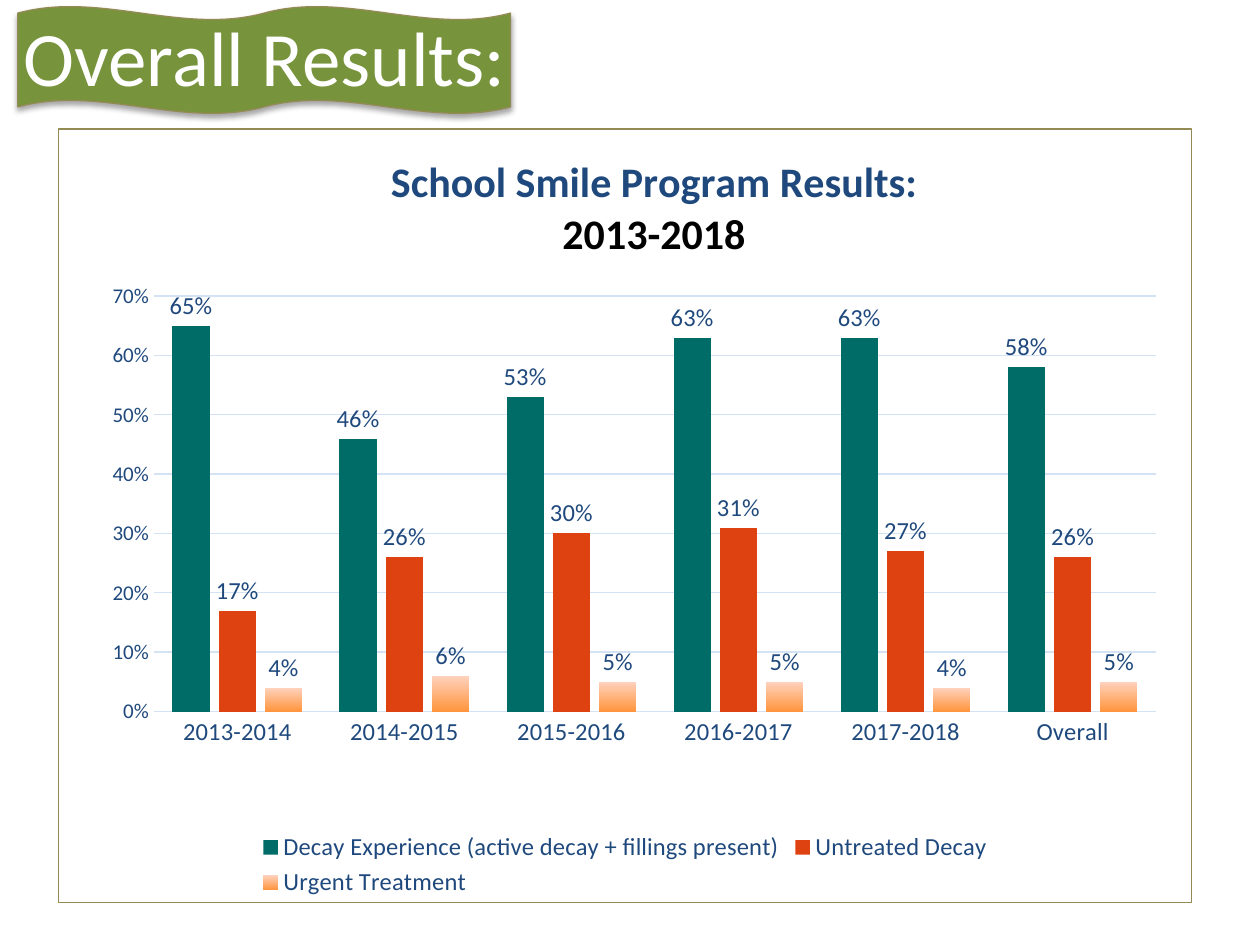
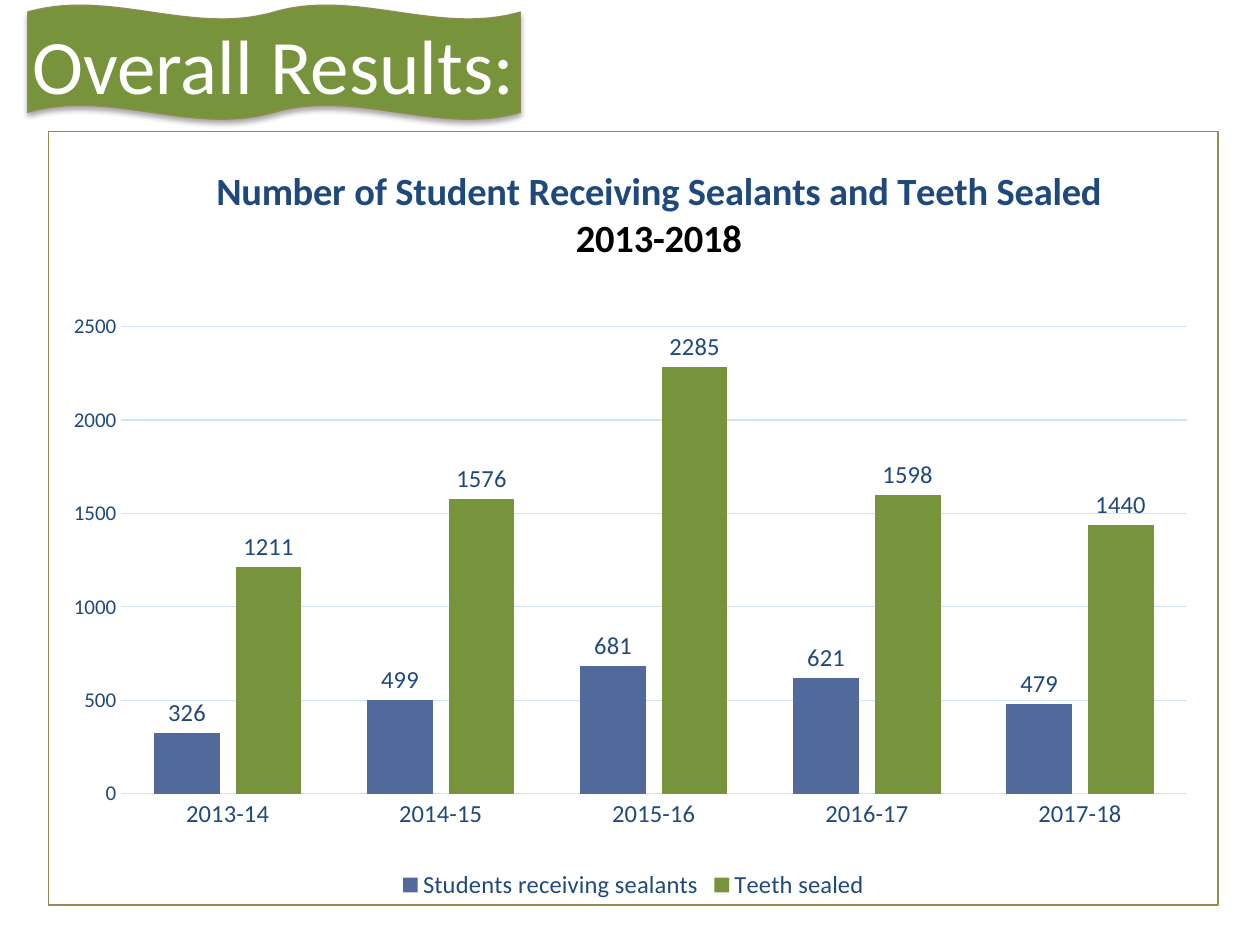
from pptx import Presentation
from pptx.chart.data import CategoryChartData
from pptx.dml.color import RGBColor
from pptx.enum.chart import XL_CHART_TYPE as ChartType, XL_LABEL_POSITION as LabelPosition
from pptx.enum.chart import XL_LEGEND_POSITION as LegendPosition, XL_TICK_MARK as TickMark
from pptx.enum.shapes import MSO_SHAPE as Shape
from pptx.enum.text import MSO_ANCHOR as Anchor, PP_ALIGN as Align
from pptx.oxml import parse_xml
from pptx.oxml.ns import nsdecls, qn
from pptx.util import Cm, Pt

FONT = "Calibri"
GREEN = RGBColor(0x77, 0x93, 0x3C)
TAN = RGBColor(0x94, 0x8A, 0x54)
NAVY = RGBColor(0x1F, 0x49, 0x7D)
BLACK = RGBColor(0x00, 0x00, 0x00)
WHITE = RGBColor(0xFF, 0xFF, 0xFF)
PALE_BLUE = RGBColor(0xD4, 0xE3, 0xF4)
TEAL = RGBColor(0x00, 0x6C, 0x67)
RED = RGBColor(0xDF, 0x42, 0x11)
ORANGE = RGBColor(0xFF, 0x95, 0x3E)
PEACH = RGBColor(0xFF, 0xD2, 0xBD)
SLATE = RGBColor(0x52, 0x69, 0x9C)

HEADING = "Overall Results:"
YEARS = "2013-2018"
PAGES = [
    {
        "wave": (0.36, 0.13, 9.93, 2.16),
        "title": (0, 0, 10.67, 3.18),
        "frame": (1.17, 2.59, 22.86, 15.62),
        "plot": (0.084, 0.216, 0.885, 0.537),
        "caption": "School Smile Program Results:",
        "caption_size": 24,
        "caption_corner": (0.29, 0.03),
        "format": "0%",
        "top": 0.7,
        "step": 0.1,
        "categories": ["2013-2014", "2014-2015", "2015-2016", "2016-2017", "2017-2018", "Overall"],
        "series": [
            ("Decay Experience (active decay + fillings present)", [TEAL],
             [0.65, 0.46, 0.53, 0.63, 0.63, 0.58]),
            ("Untreated Decay", [RED], [0.17, 0.26, 0.30, 0.31, 0.27, 0.26]),
            ("Urgent Treatment", [ORANGE, PEACH], [0.04, 0.06, 0.05, 0.05, 0.04, 0.05]),
        ],
    },
    {
        "wave": (0.56, 0.1, 9.93, 2.31),
        "title": (0, 0.15, 11.02, 3.18),
        "frame": (0.97, 2.64, 23.6, 15.62),
        "plot": (0.062, 0.252, 0.911, 0.604),
        "caption": "Number of Student Receiving Sealants and Teeth Sealed",
        "caption_size": 22,
        "caption_corner": (0.14, 0.04),
        "format": "General",
        "top": 2500,
        "step": 500,
        "categories": ["2013-14", "2014-15", "2015-16", "2016-17", "2017-18"],
        "series": [
            ("Students receiving sealants", [SLATE], [326, 499, 681, 621, 479]),
            ("Teeth sealed", [GREEN], [1211, 1576, 2285, 1598, 1440]),
        ],
    },
]


def set_font(font, size, color, bold=False):
    font.name, font.size, font.bold = FONT, Pt(size), bold
    font.color.rgb = color


def set_line(line, color):
    line.color.rgb = color
    line.width = Pt(0.75)


def set_layout(element, index, fractions, inner=False):
    for old in element.findall(qn("c:layout")):
        element.remove(old)
    target = '<c:layoutTarget val="inner"/>' if inner else ""
    modes = "".join(f'<c:{axis}Mode val="edge"/>' for axis in "xy")
    sizes = "".join(f'<c:{key} val="{value}"/>' for key, value in zip("xywh", fractions))
    element.insert(index, parse_xml(
        f'<c:layout {nsdecls("c")}><c:manualLayout>{target}{modes}{sizes}'
        "</c:manualLayout></c:layout>"))


def add_heading(page, wave_box, title_box):
    wave = page.shapes.add_shape(Shape.DOUBLE_WAVE, *map(Cm, wave_box))
    wave.fill.solid()
    wave.fill.fore_color.rgb = GREEN
    set_line(wave.line, TAN)
    wave._element.spPr.append(parse_xml(
        f'<a:effectLst {nsdecls("a")}><a:outerShdw blurRad="40000" dist="23000" dir="5400000" '
        'rotWithShape="0"><a:srgbClr val="000000"><a:alpha val="35000"/></a:srgbClr>'
        "</a:outerShdw></a:effectLst>"))
    page.shapes._spTree.insert(2, wave._element)

    title = page.shapes.title
    title.left, title.top, title.width, title.height = map(Cm, title_box)
    frame = title.text_frame
    frame.text = HEADING
    frame.vertical_anchor = Anchor.TOP
    frame.margin_top = Cm(0.2)
    para = frame.paragraphs[0]
    para.alignment = Align.CENTER
    set_font(para.font, 44, WHITE)


def add_caption(chart, content):
    frame = chart.chart_title.text_frame
    frame.text = f"{content['caption']}\n{YEARS}"
    for para, color in zip(frame.paragraphs, (NAVY, BLACK)):
        set_font(para.font, content["caption_size"], color, bold=True)
    set_layout(chart.chart_title._element, 1, content["caption_corner"])


def style_axes(chart, content):
    for axis, size in ((chart.category_axis, 14), (chart.value_axis, 12)):
        axis.major_tick_mark = axis.minor_tick_mark = TickMark.NONE
        set_font(axis.tick_labels.font, size, NAVY)
    set_line(chart.category_axis.format.line, PALE_BLUE)
    values = chart.value_axis
    values.format.line.fill.background()
    set_line(values.major_gridlines.format.line, PALE_BLUE)
    values.minimum_scale, values.maximum_scale = 0, content["top"]
    values.major_unit = content["step"]
    values.tick_labels.number_format = content["format"]
    values.tick_labels.number_format_is_linked = False


def style_series(series, colors, number_format):
    fill = series.format.fill
    if len(colors) == 1:
        fill.solid()
        fill.fore_color.rgb = colors[0]
    else:
        fill.gradient()
        fill.gradient_angle = 90
        for position, (stop, color) in enumerate(zip(fill.gradient_stops, colors)):
            stop.position = position
            stop.color.rgb = color
    labels = series.data_labels
    labels.show_value = True
    labels.position = LabelPosition.OUTSIDE_END
    labels.number_format = number_format
    labels.number_format_is_linked = False
    set_font(labels.font, 14, NAVY)


def add_results_chart(page, content):
    data = CategoryChartData(number_format=content["format"])
    data.categories = content["categories"]
    for name, _, values in content["series"]:
        data.add_series(name, values)
    chart = page.shapes.add_chart(
        ChartType.COLUMN_CLUSTERED, *map(Cm, content["frame"]), data).chart
    set_font(chart.font, 10, BLACK)
    chart._chartSpace.find(qn("c:chart")).addnext(parse_xml(
        f'<c:spPr {nsdecls("c", "a")}><a:noFill/><a:ln w="9525"><a:solidFill>'
        f'<a:srgbClr val="{TAN}"/></a:solidFill></a:ln></c:spPr>'))
    add_caption(chart, content)
    style_axes(chart, content)

    plot = chart.plots[0]
    plot.gap_width, plot.overlap, plot.vary_by_categories = 100, -24, False
    set_layout(plot._element.getparent(), 0, content["plot"], inner=True)
    for series, (_, colors, _) in zip(plot.series, content["series"]):
        style_series(series, colors, content["format"])

    chart.has_legend = True
    chart.legend.position = LegendPosition.BOTTOM
    chart.legend.include_in_layout = False
    set_font(chart.legend.font, 14, NAVY)


def main():
    """Build the two results slides."""
    deck = Presentation()
    deck.slide_width, deck.slide_height = Cm(25.4), Cm(19.05)
    for content in PAGES:
        page = deck.slides.add_slide(deck.slide_layouts.get_by_name("Title Only"))
        add_heading(page, content["wave"], content["title"])
        add_results_chart(page, content)
    deck.save("out.pptx")


if __name__ == "__main__":
    main()
